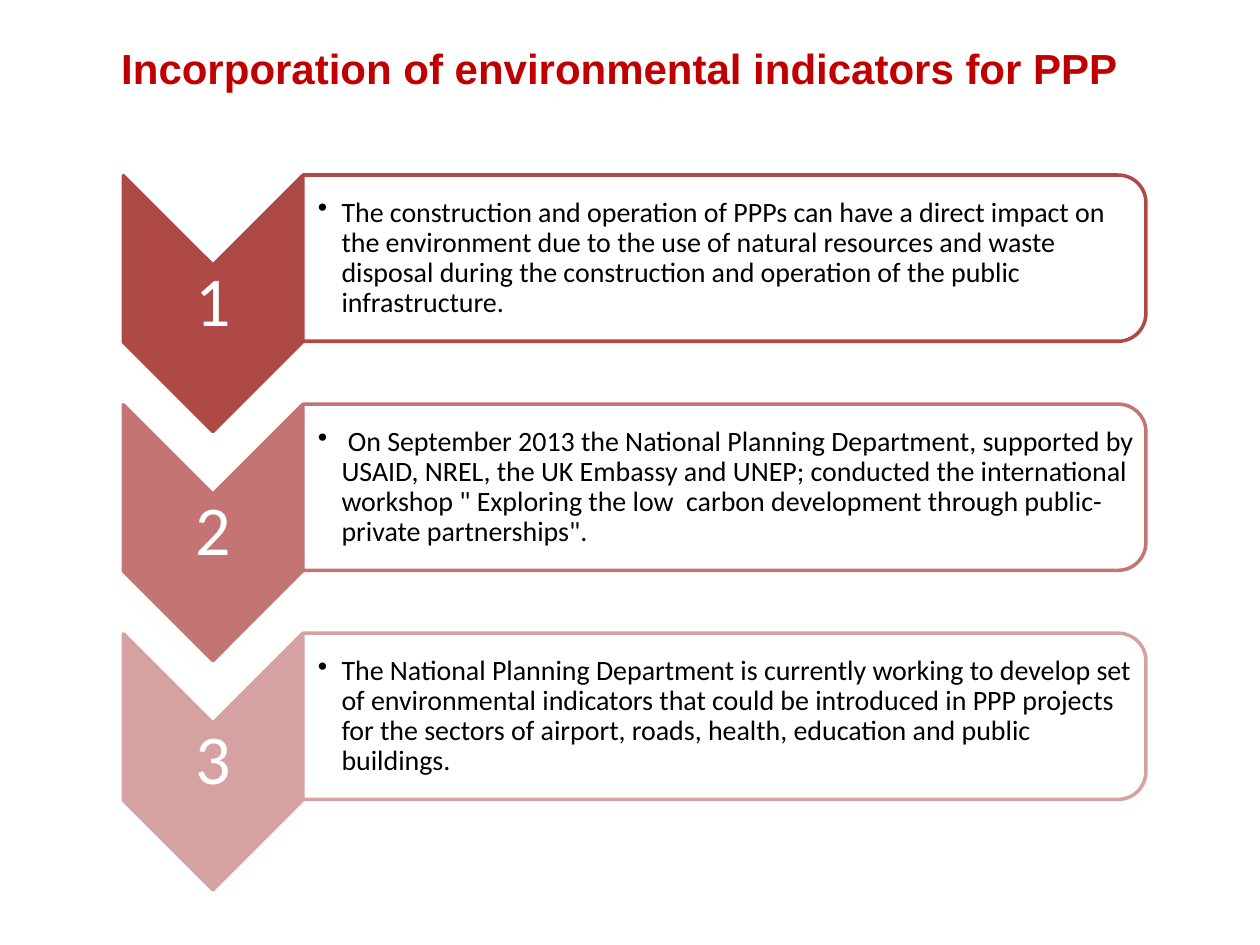
import pptx
import pptx.util
import pptx.dml.color
import pptx.enum.shapes
import pptx.enum.text
import pptx.oxml.ns
from lxml import etree

Pt = pptx.util.Pt
Shapes = pptx.enum.shapes.MSO_SHAPE
Align = pptx.enum.text.PP_ALIGN
Anchor = pptx.enum.text.MSO_ANCHOR
qn = pptx.oxml.ns.qn


def color(hex_code):
    return pptx.dml.color.RGBColor.from_string(hex_code)


class Deck:
    title_font, body_font = "Arial", "Calibri"
    title_color, number_color, body_color = "C00000", "FFFFFF", "000000"
    panel_color, panel_alpha = "FFFFFF", 90
    line_width = 2

    def __init__(self, width, height):
        self.prs = pptx.Presentation()
        self.prs.slide_width, self.prs.slide_height = Pt(width), Pt(height)
        self.slide = self.prs.slides.add_slide(self.prs.slide_layouts[6])

    def turned_shape(self, kind, left, top, width, height, fill, line):
        """Add a shape turned by 90 degrees that covers the given box."""
        shift = (width - height) / 2
        shape = self.slide.shapes.add_shape(
            kind, Pt(left + shift), Pt(top - shift), Pt(height), Pt(width))
        shape.rotation = 90
        shape.shadow.inherit = False
        shape.fill.solid()
        shape.fill.fore_color.rgb = color(fill)
        shape.line.color.rgb = color(line)
        shape.line.width = Pt(self.line_width)
        return shape

    def chevron(self, left, top, width, height, tint):
        self.turned_shape(Shapes.CHEVRON, left, top, width, height, tint, tint)

    def panel(self, left, top, width, height, tint):
        panel = self.turned_shape(Shapes.ROUND_2_SAME_RECTANGLE, left, top,
                                  width, height, self.panel_color, tint)
        fill = panel.fill._xPr.find(qn("a:solidFill"))
        etree.SubElement(fill[0], qn("a:alpha"), val=str(self.panel_alpha * 1000))

    def text(self, words, left, top, width, height, size, font, tint,
             margins, align=Align.LEFT, anchor=Anchor.MIDDLE, spacing=0.9,
             bold=False, bullet_indent=0):
        box = self.slide.shapes.add_textbox(Pt(left), Pt(top), Pt(width), Pt(height))
        frame = box.text_frame
        frame.word_wrap = True
        frame.vertical_anchor = anchor
        (frame.margin_left, frame.margin_top,
         frame.margin_right, frame.margin_bottom) = map(Pt, margins)
        paragraph = frame.paragraphs[0]
        paragraph.text = words
        paragraph.alignment = align
        paragraph.line_spacing = spacing
        if bullet_indent:
            props = paragraph._p.get_or_add_pPr()
            props.set("marL", str(Pt(bullet_indent)))
            props.set("indent", str(-Pt(bullet_indent)))
            etree.SubElement(props, qn("a:buChar"), char="•")
        paragraph.font.size = Pt(size)
        paragraph.font.name = font
        paragraph.font.bold = bold
        paragraph.font.color.rgb = color(tint)

    def title(self, words):
        self.text(words, 48, 21, 612, 36, 24, self.title_font, self.title_color,
                  (7.2, 3.6, 7.2, 3.6), Align.CENTER, Anchor.TOP, 1.0, bold=True)

    def number(self, words, left, top, width, height):
        self.text(words, left, top, width, height, 40, self.body_font,
                  self.number_color, (2, 2, 2, 2), Align.CENTER)

    def statement(self, words, left, top, width, height):
        self.text(words, left, top, width, height, 16, self.body_font,
                  self.body_color, (8.9, 0.8, 0.8, 0.8), bullet_indent=13.5)


def main():
    deck = Deck(720, 540)
    deck.title("Incorporation of environmental indicators for PPP")

    steps = [
        ("AE4946", "The construction and operation of PPPs can have a direct impact on "
                   "the environment due to the use of natural resources and waste "
                   "disposal during the construction and operation of the public "
                   "infrastructure."),
        ("C47472", " On September 2013 the National Planning Department, supported by "
                   "USAID, NREL, the UK Embassy and UNEP; conducted the international "
                   "workshop \" Exploring the low  carbon development through "
                   "public-private partnerships\"."),
        ("D6A2A1", "The National Planning Department is currently working to develop set "
                   "of environmental indicators that could be introduced in PPP projects "
                   "for the sectors of airport, roads, health, education and public "
                   "buildings."),
    ]
    first_top, step_gap = 100, 130.9
    chevron_left, chevron_width, chevron_height = 70.5, 102.3, 146.2
    panel_left = chevron_left + chevron_width

    # One numbered chevron with its statement panel per step
    for index, (tint, statement) in enumerate(steps):
        top = first_top + index * step_gap
        deck.chevron(chevron_left, top + 0.4, chevron_width, chevron_height, tint)
        deck.number(str(index + 1), chevron_left, top + 51.5, chevron_width, 43.9)
        deck.panel(panel_left + 0.3, top, 481.7, 95, tint)
        deck.statement(statement, panel_left, top + 4.8, 477.4, 85.7)

    deck.prs.save("out.pptx")


if __name__ == "__main__":
    main()
